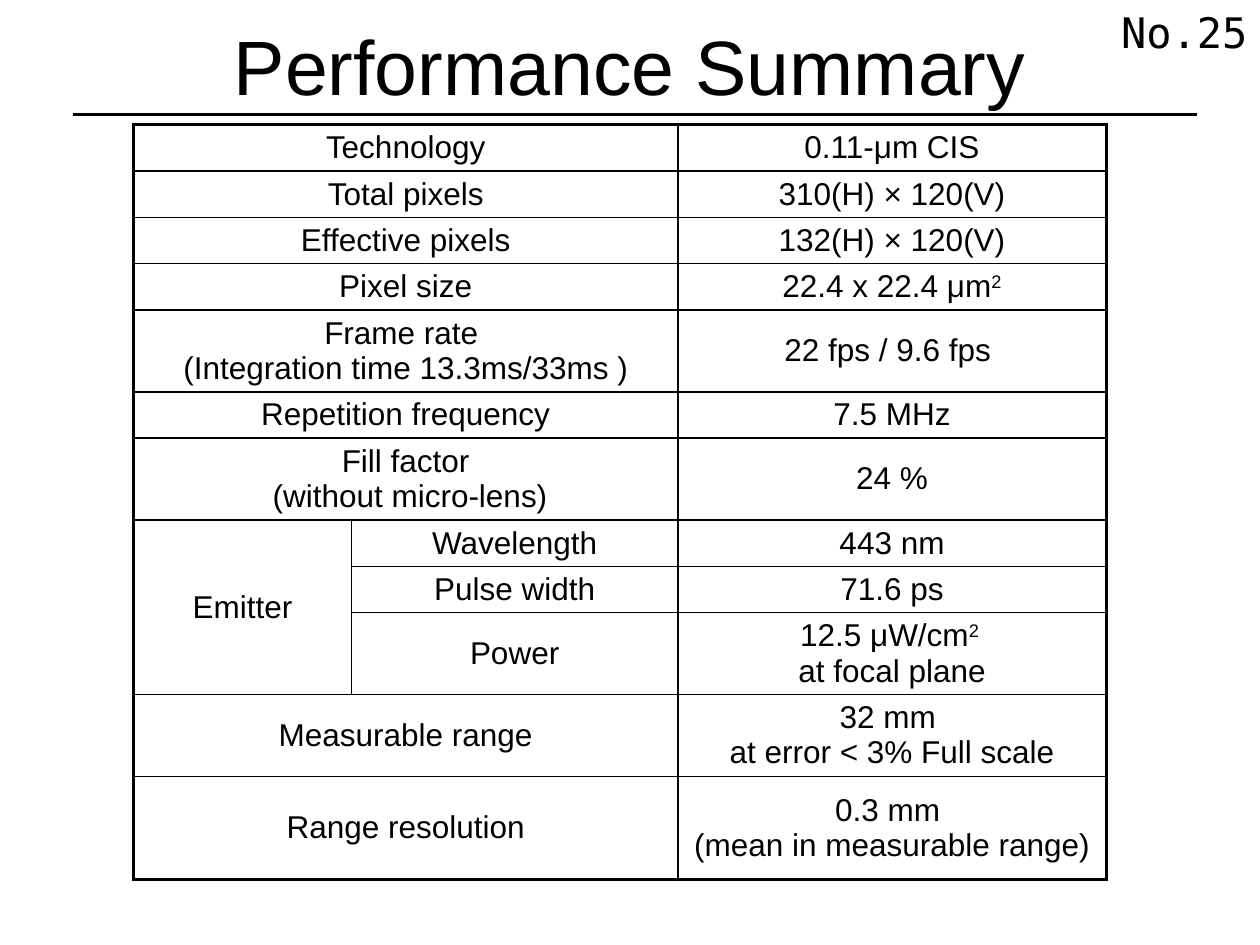
import pptx
import pptx.dml.color
import pptx.enum.shapes
import pptx.enum.text
import pptx.oxml
import pptx.oxml.ns
import pptx.util
from pptx.util import Inches

BLACK = pptx.dml.color.RGBColor(0, 0, 0)
CENTER = pptx.enum.text.PP_ALIGN.CENTER
RIGHT = pptx.enum.text.PP_ALIGN.RIGHT
MIDDLE = pptx.enum.text.MSO_ANCHOR.MIDDLE
OUTER_BORDER = pptx.util.Pt(2.25)
INNER_BORDER = pptx.util.Pt(1)
COLUMN_WIDTHS = [1.73, 2.59, 3.4]
SINGLE, DOUBLE, LAST = 1.47 / 4, 0.65, 0.82
EMITTER_ROWS = (7, 9)
SUPERSCRIPT_MARK = "^"

PERFORMANCE = [
    (SINGLE, "Technology", "", "0.11-μm CIS"),
    (SINGLE, "Total pixels", "", "310(H) × 120(V)"),
    (SINGLE, "Effective pixels", "", "132(H) × 120(V)"),
    (SINGLE, "Pixel size", "", "22.4 x 22.4 μm^2^"),
    (DOUBLE, "Frame rate \v(Integration time 13.3ms/33ms )", "", "22 fps / 9.6 fps "),
    (SINGLE, "Repetition frequency", "", "7.5 MHz"),
    (DOUBLE, "Fill factor\n (without micro-lens)", "", "24 %"),
    (SINGLE, "Emitter", "Wavelength", "443 nm"),
    (SINGLE, "", "Pulse width", "71.6 ps"),
    (DOUBLE, "", "Power", "12.5 μW/cm^2 ^\vat focal plane"),
    (DOUBLE, "Measurable range", "", "32 mm \nat error < 3% Full scale"),
    (LAST, "Range resolution", "", "0.3 mm \n(mean in measurable range)"),
]


def add_run(paragraph, text, size, font_name="Arial"):
    """Add one black run to a paragraph and return it."""
    run = paragraph.add_run()
    run.text = text
    run.font.size = pptx.util.Pt(size)
    run.font.name = font_name
    run.font.color.rgb = BLACK
    return run


def write_cell(cell, text):
    """Write centred paragraphs with superscripts and line breaks."""
    cell.vertical_anchor = MIDDLE
    for index, line in enumerate(text.split("\n")):
        frame = cell.text_frame
        paragraph = frame.add_paragraph() if index else frame.paragraphs[0]
        paragraph.alignment = CENTER
        for part_index, part in enumerate(line.split(SUPERSCRIPT_MARK)):
            for piece_index, piece in enumerate(part.split("\v")):
                if piece_index:
                    paragraph.add_line_break()
                if piece:
                    run = add_run(paragraph, piece, 18)
                    if part_index % 2:
                        run.font._element.set("baseline", "30000")


def set_margins(cell, horizontal, vertical):
    """Set equal side margins and equal top and bottom margins."""
    cell.margin_left = cell.margin_right = Inches(horizontal)
    cell.margin_top = cell.margin_bottom = Inches(vertical)


def set_borders(cell, widths):
    """Draw the left, right, top and bottom borders of a cell."""
    cell.fill.background()
    properties = cell._tc.get_or_add_tcPr()
    for index, (side, width) in enumerate(zip("LRTB", widths)):
        border = pptx.oxml.parse_xml(
            f'<a:ln{side} {pptx.oxml.ns.nsdecls("a")} w="{width}">'
            f'<a:solidFill><a:srgbClr val="{BLACK}"/></a:solidFill></a:ln{side}>'
        )
        properties.insert(index, border)


def add_title(slide, left, top, width, height):
    """Place the slide title in its placeholder."""
    title = slide.shapes.title
    title.left, title.top, title.width, title.height = left, top, width, height
    title.text_frame.vertical_anchor = MIDDLE
    paragraph = title.text_frame.paragraphs[0]
    paragraph.alignment = CENTER
    add_run(paragraph, "Performance Summary", 44)


def add_rule(slide, left, top, width):
    """Draw the horizontal rule below the title."""
    rule = slide.shapes.add_connector(
        pptx.enum.shapes.MSO_CONNECTOR.STRAIGHT, left, top, left + width, top
    )
    rule.line.color.rgb = BLACK
    rule.line.width = pptx.util.Pt(2)
    rule._element.spPr.append(
        pptx.oxml.parse_xml(f'<a:effectLst {pptx.oxml.ns.nsdecls("a")}/>')
    )


def add_performance_table(slide, left, top, width, height):
    """Build the table of sensor and emitter figures."""
    row_count, column_count = len(PERFORMANCE), len(COLUMN_WIDTHS)
    table = slide.shapes.add_table(
        row_count, column_count, left, top, width, height
    ).table
    table.first_row = False
    table.horz_banding = False
    for column, column_width in zip(table.columns, COLUMN_WIDTHS):
        column.width = Inches(column_width)
    for row, (row_height, *texts) in enumerate(PERFORMANCE):
        table.rows[row].height = Inches(row_height)
        for column, text in enumerate(texts):
            cell = table.cell(row, column)
            edges = (column == 0, column == column_count - 1,
                     row == 0, row == row_count - 1)
            set_borders(cell, [OUTER_BORDER if edge else INNER_BORDER for edge in edges])
            if column == 1:
                set_margins(cell, 0, 0)
            else:
                set_margins(cell, 0.09, 0.04)
            if text:
                write_cell(cell, text)
        if texts[0] and not texts[1]:
            table.cell(row, 0).merge(table.cell(row, 1))
    first, last = EMITTER_ROWS
    table.cell(first, 0).merge(table.cell(last, 0))


def add_page_number(slide, left, top, width, height):
    """Place the page number in the top right corner."""
    frame = slide.shapes.add_textbox(left, top, width, height).text_frame
    frame.word_wrap = True
    paragraph = frame.paragraphs[0]
    paragraph.alignment = RIGHT
    add_run(paragraph, "No.25", 24, "DejaVu Sans Mono")


def main():
    """Build and save the performance summary slide."""
    presentation = pptx.Presentation()
    presentation.slide_width = Inches(10)
    presentation.slide_height = Inches(7.5)
    slide = presentation.slides.add_slide(presentation.slide_layouts[5])
    add_rule(slide, Inches(0.58), Inches(0.91), Inches(8.92))
    add_title(slide, Inches(0.5), Inches(-0.11), Inches(9), Inches(1.25))
    table_height = sum(row[0] for row in PERFORMANCE)
    add_performance_table(
        slide, Inches(1.06), Inches(0.99), Inches(sum(COLUMN_WIDTHS)), Inches(table_height)
    )
    add_page_number(slide, Inches(7.67), Inches(0), Inches(2.33), Inches(0.52))
    presentation.save("out.pptx")


if __name__ == "__main__":
    main()
